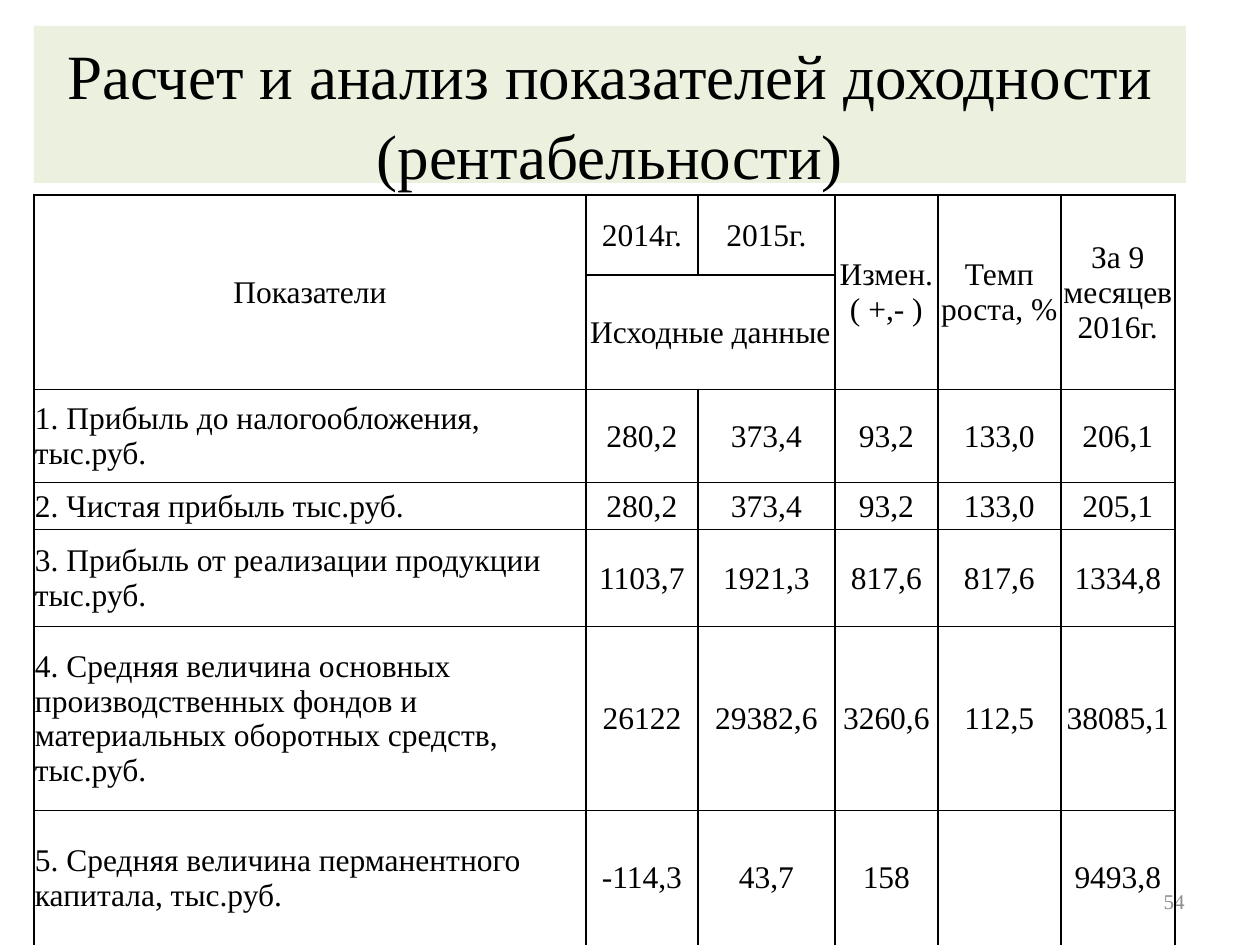
from dataclasses import dataclass
from typing import Any

from lxml import etree
from pptx import Presentation
from pptx import util as u
from pptx.dml.color import RGBColor
from pptx.enum import text
from pptx.oxml.ns import qn

SCALE = u.Inches(1) / 126
COLUMNS = (552, 112, 137, 103, 123, 114)
ROWS = (80, 105, 93, 47, 97, 184, 135)
MERGES = ((0, 0, 1, 0), (0, 3, 1, 3), (0, 4, 1, 4), (0, 5, 1, 5), (1, 1, 1, 2))
INDICATORS = (
    ("Показатели", "2014г.", "2015г.", "Измен.\n( +,- )", "Темп роста, %", "За 9 месяцев\n2016г."),
    ("", "Исходные данные", "", "", "", ""),
    ("1. Прибыль до налогообложения, тыс.руб.", "280,2", "373,4", "93,2", "133,0", "206,1"),
    ("2. Чистая прибыль тыс.руб.", "280,2", "373,4", "93,2", "133,0", "205,1"),
    ("3. Прибыль от реализации продукции тыс.руб.", "1103,7", "1921,3", "817,6", "817,6", "1334,8"),
    ("4. Средняя величина основных производственных фондов и материальных оборотных средств, тыс.руб.",
     "26122", "29382,6", "3260,6", "112,5", "38085,1"),
    ("5. Средняя величина перманентного капитала, тыс.руб.", "-114,3", "43,7", "158", "", "9493,8"),
)


def px(length):
    return u.Emu(round(length * SCALE))


def color(value):
    return RGBColor.from_string(value)


def assign(target, values):
    for name, value in values.items():
        setattr(target, name, value)


@dataclass
class IndicatorSlide:
    """Holds the style and the slide, and adds each kind of element."""

    slide: Any
    font: str = "Times New Roman"
    ink: str = "000000"
    band: str = "EBF1DE"
    muted: str = "8C8C8C"

    def fill_text(self, frame, content, size, align, ink=None):
        frame.text = content
        for paragraph in frame.paragraphs:
            paragraph.alignment = align
            assign(paragraph.font, {"name": self.font, "size": u.Pt(size)})
            paragraph.font.color.rgb = color(ink or self.ink)

    def place(self, shape, left, top, width, height):
        box = {"left": left, "top": top, "width": width, "height": height}
        assign(shape, {name: px(length) for name, length in box.items()})

    def title(self, content, *box):
        shape = self.slide.shapes.title
        self.place(shape, *box)
        shape.fill.solid()
        shape.fill.fore_color.rgb = color(self.band)
        frame = shape.text_frame
        self.fill_text(frame, content, 36, text.PP_ALIGN.CENTER)
        assign(frame, {"word_wrap": True, "auto_size": text.MSO_AUTO_SIZE.NONE,
                       "vertical_anchor": text.MSO_ANCHOR.MIDDLE, "margin_top": px(16), "margin_bottom": 0})
        frame.paragraphs[0].line_spacing = 1.05

    def page_number(self, content, *box):
        shape = self.slide.shapes.add_textbox(*map(px, box))
        self.fill_text(shape.text_frame, content, 12, text.PP_ALIGN.RIGHT, self.muted)
        assign(shape.text_frame, {"word_wrap": True, "vertical_anchor": text.MSO_ANCHOR.MIDDLE})

    def borders(self, cell):
        properties = cell._tc.get_or_add_tcPr()
        for index, side in enumerate(("lnL", "lnR", "lnT", "lnB")):
            line = etree.Element(qn(f"a:{side}"), w=str(u.Pt(1)))
            fill = etree.SubElement(line, qn("a:solidFill"))
            etree.SubElement(fill, qn("a:srgbClr"), val=self.ink)
            properties.insert(index, line)

    def table(self, rows, left, top):
        frame = self.slide.shapes.add_table(
            len(ROWS), len(COLUMNS), px(left), px(top), px(sum(COLUMNS)), px(sum(ROWS)))
        table = frame.table
        assign(table, {"first_row": False, "horz_banding": False})
        for column, width in zip(table.columns, COLUMNS):
            column.width = px(width)
        for row, height in zip(table.rows, ROWS):
            row.height = px(height)
        for row_index, row in enumerate(rows):
            for column_index, content in enumerate(row):
                cell = table.cell(row_index, column_index)
                is_label = row_index > 1 and column_index == 0
                align = text.PP_ALIGN.LEFT if is_label else text.PP_ALIGN.CENTER
                self.fill_text(cell.text_frame, content, 18, align)
                assign(cell, {"vertical_anchor": text.MSO_ANCHOR.MIDDLE, "margin_left": px(1),
                              "margin_right": px(1), "margin_top": px(1), "margin_bottom": 0})
                cell.fill.background()
                self.borders(cell)
        for first_row, first_column, last_row, last_column in MERGES:
            table.cell(first_row, first_column).merge(table.cell(last_row, last_column))


def main():
    presentation = Presentation()
    assign(presentation, {"slide_width": u.Inches(10), "slide_height": u.Inches(7.5)})
    page = IndicatorSlide(presentation.slides.add_slide(presentation.slide_layouts[5]))
    page.title("Расчет и анализ показателей доходности (рентабельности)", 34, 26, 1152, 157)
    page.page_number("54", 903, 876, 294, 50)
    page.table(INDICATORS, 34, 195)
    presentation.save("out.pptx")


if __name__ == "__main__":
    main()
